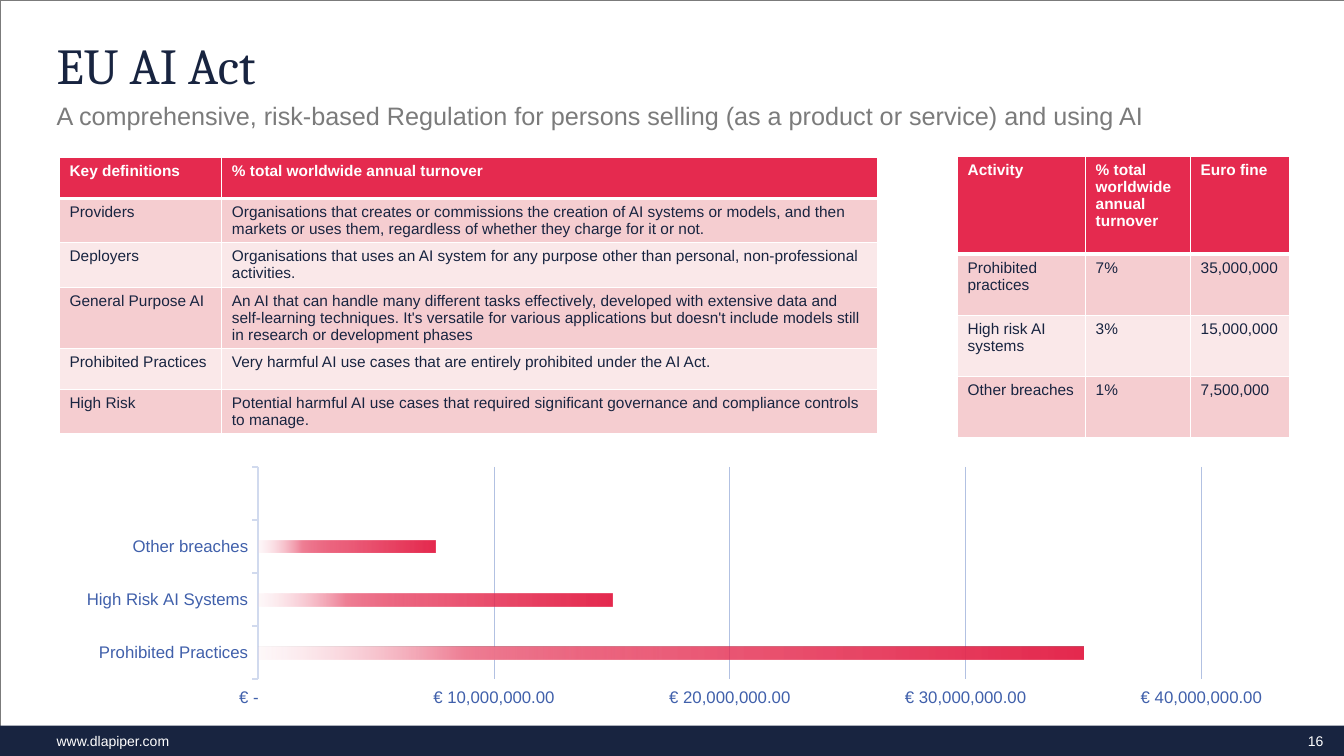
import pptx
import pptx.chart.data
import pptx.dml.color
import pptx.enum.chart
import pptx.enum.shapes
import pptx.enum.text
import pptx.oxml
import pptx.oxml.ns
import pptx.util
from dataclasses import dataclass

Pt = pptx.util.Pt
ALIGN = pptx.enum.text.PP_ALIGN
ANCHOR = pptx.enum.text.MSO_ANCHOR

# Content
TITLE = "EU AI Act"
SUBTITLE = ("A comprehensive, risk-based Regulation for persons selling "
            "(as a product or service) and using AI")
SITE = "www.dlapiper.com"
PAGE = "16"
DEFINITIONS = [
    ("Key definitions", "% total worldwide annual turnover"),
    ("Providers", "Organisations that creates or commissions the creation of AI systems or models, "
                  "and then markets or uses them, regardless of whether they charge for it or not."),
    ("Deployers", "Organisations that uses an AI system for any purpose other than personal, "
                  "non-professional activities."),
    ("General Purpose AI", "An AI that can handle many different tasks effectively, developed with "
                           "extensive data and self-learning techniques. It's versatile for various "
                           "applications but doesn't include models still in research or "
                           "development phases"),
    ("Prohibited Practices", "Very harmful AI use cases that are entirely prohibited under the AI Act."),
    ("High Risk", "Potential harmful AI use cases that required significant governance and "
                  "compliance controls to manage."),
]
FINES = [
    ("Activity", "% total worldwide annual turnover", "Euro fine"),
    ("Prohibited practices", "7%", "35,000,000"),
    ("High risk AI systems", "3%", "15,000,000"),
    ("Other breaches", "1%", "7,500,000"),
]
MAXIMUM_FINES = [
    ("Prohibited Practices", 35000000),
    ("High Risk AI Systems", 15000000),
    ("Other breaches", 7500000),
    ("", None),
]
EURO_FORMAT = ('_-[$€-2]\\ * #,##0.00_-;\\-[$€-2]\\ * #,##0.00_-;'
               '_-[$€-2]\\ * "-"??_-;_-@_-')


@dataclass(frozen=True)
class Theme:
    navy: str = "182440"
    grey: str = "7B7B7B"
    white: str = "FFFFFF"
    red: str = "E52A4F"
    bands: tuple = ("F5CDD0", "FAE8E9")
    axis_text: str = "4060AB"
    axis_line: str = "D1DAEE"
    grid: str = "B2C1E2"
    # position %, colour, opacity %
    bar_stops: tuple = ((0, "E52A4F", 100), (51, "E52A4F", 75),
                        (75, "EF7F95", 100), (100, "FAD4DC", 15))
    heading_font: str = "Cambria"
    body_font: str = "Arial"
    title_size: float = 36
    subtitle_size: float = 18
    axis_size: float = 12
    table_size: float = 11
    footer_size: float = 10


THEME = Theme()
WIDTH, HEIGHT = 960, 540
MARGIN, CONTENT_WIDTH = 40.5, 878.5
FOOTER_HEIGHT = 21.6


def rgb(value):
    return pptx.dml.color.RGBColor.from_string(value)


def style(font, size, colour, family=THEME.body_font, bold=False):
    font.name, font.size, font.bold = family, Pt(size), bold
    font.color.rgb = rgb(colour)


def write(frame, text, size, colour, family=THEME.body_font, bold=False, align=ALIGN.LEFT):
    paragraph = frame.paragraphs[0]
    paragraph.alignment = align
    run = paragraph.add_run()
    run.text = text
    style(run.font, size, colour, family, bold)
    return paragraph


def bare_frame(shape, anchor=ANCHOR.TOP):
    frame = shape.text_frame
    frame.word_wrap = True
    frame.auto_size = pptx.enum.text.MSO_AUTO_SIZE.NONE
    frame.vertical_anchor = anchor
    frame.margin_left = frame.margin_right = frame.margin_top = frame.margin_bottom = 0
    return frame


def add_label(slide, box, text, size, colour, anchor=ANCHOR.TOP, align=ALIGN.LEFT):
    label = slide.shapes.add_textbox(*map(Pt, box))
    write(bare_frame(label, anchor), text, size, colour, align=align)


def add_rectangle(slide, box):
    rectangle = slide.shapes.add_shape(pptx.enum.shapes.MSO_SHAPE.RECTANGLE, *map(Pt, box))
    rectangle.shadow.inherit = False
    return rectangle


def set_borders(cell, top, bottom):
    properties = cell._tc.get_or_add_tcPr()
    for side, width in (("L", 1), ("R", 1), ("T", top), ("B", bottom)):
        properties.append(pptx.oxml.parse_xml(
            f'<a:ln{side} {pptx.oxml.ns.nsdecls("a")} w="{Pt(width)}"><a:solidFill>'
            f'<a:srgbClr val="{THEME.white}"/></a:solidFill></a:ln{side}>'))


def add_table(slide, left, top, rows, widths, heights):
    table = slide.shapes.add_table(len(rows), len(widths), Pt(left), Pt(top),
                                   Pt(sum(widths)), Pt(sum(heights))).table
    table.horz_banding = False
    for column, width in zip(table.columns, widths):
        column.width = Pt(width)
    for r, (texts, height) in enumerate(zip(rows, heights)):
        table.rows[r].height = Pt(height)
        header = r == 0
        for c, text in enumerate(texts):
            cell = table.cell(r, c)
            set_borders(cell, 3 if r == 1 else 1, 3 if header else 1)
            cell.fill.solid()
            cell.fill.fore_color.rgb = rgb(THEME.red if header else THEME.bands[(r - 1) % 2])
            write(cell.text_frame, text, THEME.table_size,
                  THEME.white if header else THEME.navy, bold=header)


def fade_bars(series):
    series.format.fill.solid()
    properties = series._element.get_or_add_spPr()
    stops = "".join(
        f'<a:gs pos="{place * 1000}"><a:srgbClr val="{colour}">'
        f'<a:alpha val="{opacity * 1000}"/></a:srgbClr></a:gs>'
        for place, colour, opacity in THEME.bar_stops)
    fade = pptx.oxml.parse_xml(
        f'<a:gradFill {pptx.oxml.ns.nsdecls("a")} rotWithShape="1"><a:gsLst>{stops}</a:gsLst>'
        '<a:lin ang="10800000" scaled="0"/></a:gradFill>')
    properties.replace(properties[0], fade)


def place_plot(chart, x, y, w, h):
    area = chart._chartSpace.chart.plotArea
    for old in area.findall(pptx.oxml.ns.qn("c:layout")):
        area.remove(old)
    sizes = "".join(f'<c:{name} val="{value}"/>' for name, value in zip("xywh", (x, y, w, h)))
    area.insert(0, pptx.oxml.parse_xml(
        f'<c:layout {pptx.oxml.ns.nsdecls("c")}><c:manualLayout><c:layoutTarget val="inner"/>'
        f'<c:xMode val="edge"/><c:yMode val="edge"/>{sizes}</c:manualLayout></c:layout>'))


def add_fines_chart(slide, box):
    data = pptx.chart.data.CategoryChartData(number_format="General")
    data.categories = [activity for activity, _ in MAXIMUM_FINES]
    data.add_series("Series 1", [fine for _, fine in MAXIMUM_FINES])
    chart = slide.shapes.add_chart(pptx.enum.chart.XL_CHART_TYPE.BAR_CLUSTERED,
                                   *map(Pt, box), data).chart
    chart.has_legend = chart.has_title = False
    style(chart.font, THEME.footer_size, THEME.navy)
    plot = chart.plots[0]
    plot.vary_by_categories = False
    plot.gap_width, plot.overlap = 326, -58
    fade_bars(plot.series[0])

    activities, euros = chart.category_axis, chart.value_axis
    for axis in (activities, euros):
        axis.major_tick_mark = pptx.enum.chart.XL_TICK_MARK.OUTSIDE
        style(axis.tick_labels.font, THEME.axis_size, THEME.axis_text)
    activities.format.line.color.rgb = rgb(THEME.axis_line)
    activities.format.line.width = Pt(1.5)
    euros.minimum_scale, euros.maximum_scale, euros.major_unit = 0, 40000000, 10000000
    euros.format.line.fill.background()
    euros.major_gridlines.format.line.color.rgb = rgb(THEME.grid)
    euros.major_gridlines.format.line.width = Pt(0.75)
    euros.tick_labels.number_format = EURO_FORMAT
    euros.tick_labels.number_format_is_linked = False
    place_plot(chart, 0.16, 0.02, 0.77, 0.85)


def main():
    deck = pptx.Presentation()
    deck.slide_width, deck.slide_height = Pt(WIDTH), Pt(HEIGHT)
    slide = deck.slides.add_slide(deck.slide_layouts[5])

    # Page frame and footer
    frame = add_rectangle(slide, (0, 0, WIDTH, HEIGHT))
    frame.fill.background()
    frame.line.color.rgb = rgb(THEME.grey)
    frame.line.width = Pt(0.15)
    footer_top = HEIGHT - FOOTER_HEIGHT
    footer = add_rectangle(slide, (0, footer_top, WIDTH, FOOTER_HEIGHT))
    footer.fill.solid()
    footer.fill.fore_color.rgb = rgb(THEME.navy)
    footer.line.fill.background()
    for left, width, text, align in ((MARGIN, 136, SITE, ALIGN.LEFT),
                                     (WIDTH - 40.5, 40.5, PAGE, ALIGN.CENTER)):
        add_label(slide, (left, footer_top, width, FOOTER_HEIGHT), text,
                  THEME.footer_size, THEME.white, ANCHOR.MIDDLE, align)

    # Title and subtitle
    title = slide.shapes.title
    title.left, title.top, title.width, title.height = map(Pt, (MARGIN, 29, CONTENT_WIDTH, 45))
    write(bare_frame(title), TITLE, THEME.title_size, THEME.navy,
          THEME.heading_font).line_spacing = 0.9
    add_label(slide, (MARGIN, 71.5, CONTENT_WIDTH, 22), SUBTITLE,
              THEME.subtitle_size, THEME.grey)

    # Tables and chart
    add_table(slide, 684, 111.5, FINES, (91.5, 75, 70.5), (70, 43.7, 43.7, 43.7))
    add_table(slide, 42.5, 112.5, DEFINITIONS, (116, 468.5), [29.2] * len(DEFINITIONS))
    add_fines_chart(slide, (44.5, 330, 875, 178.5))
    deck.save("out.pptx")


if __name__ == "__main__":
    main()
